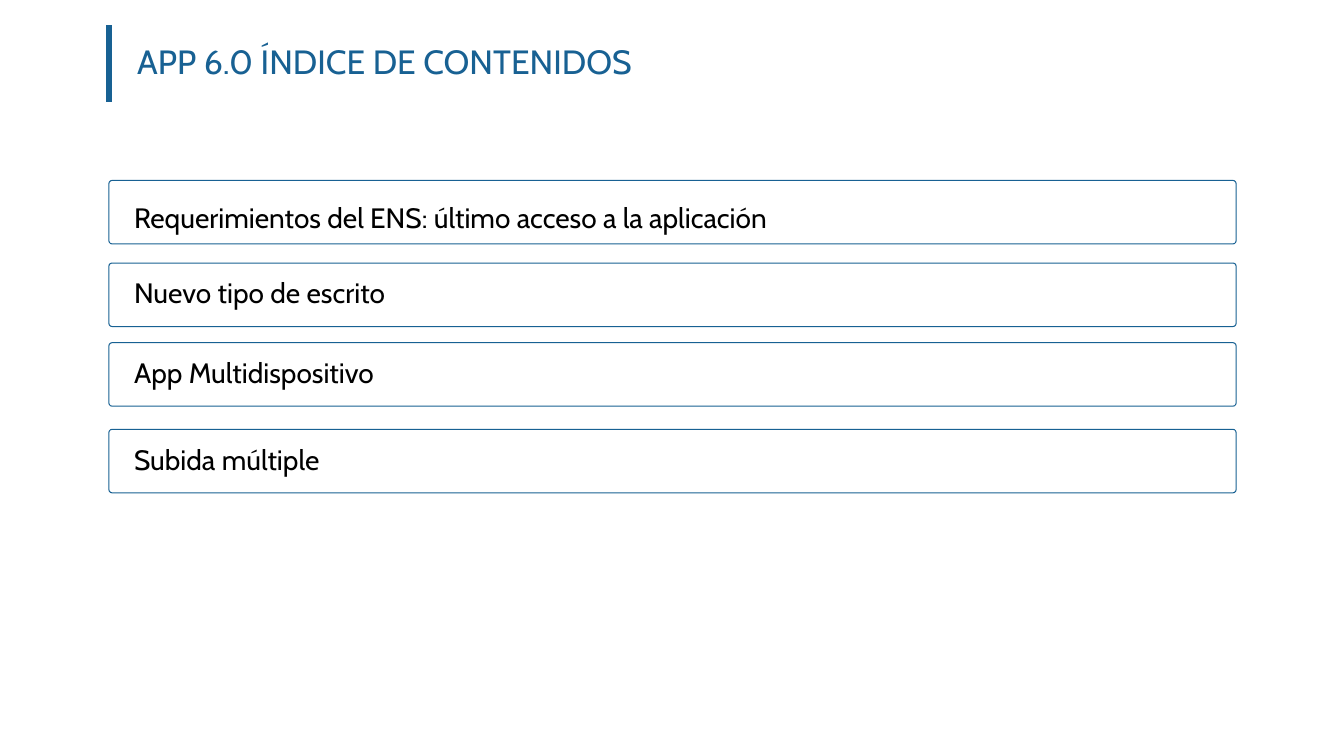
from lxml import etree
from pptx import Presentation
from pptx.dml.color import RGBColor
from pptx.enum.shapes import MSO_CONNECTOR as CONN, MSO_SHAPE as SHAPE
from pptx.enum.text import MSO_ANCHOR as ANCHOR, PP_ALIGN as ALIGN
from pptx.oxml.ns import qn
from pptx.util import Inches, Pt

BLUE = "186193"
BLACK = "000000"
FONT = "Cabin"
LEFT, WIDTH = 1.08, 11.18
ENTRY_HEIGHT = 0.63
ENTRIES = [
    (1.79, "Requerimientos del ENS: último acceso a la aplicación", 0.19),
    (2.61, "Nuevo tipo de escrito", 0.05),
    (3.4, "App Multidispositivo", 0.05),
    (4.26, "Subida múltiple", 0.05),
]


def rgb(value):
    return RGBColor.from_string(value)


def set_text(s, text, size, color, inset, top=0.05):
    tf = s.text_frame
    tf.text = text
    tf.word_wrap = True
    tf.vertical_anchor = ANCHOR.MIDDLE
    tf.margin_left, tf.margin_right = Inches(inset), Inches(0.1)
    tf.margin_top, tf.margin_bottom = Inches(top), Inches(0.05)
    p = tf.paragraphs[0]
    p.alignment = ALIGN.LEFT
    p.line_spacing = 0.9
    r = p.runs[0]
    r.font.name = FONT
    r.font.size = Pt(size)
    r.font.color.rgb = rgb(color)


def add_title_bar(slide):
    s = slide.shapes.add_connector(
        CONN.STRAIGHT, Inches(LEFT), Inches(0.25), Inches(LEFT), Inches(1.01))
    s.line.color.rgb = rgb(BLUE)
    s.line.width = Pt(4.5)
    etree.SubElement(s._element.spPr, qn("a:effectLst"))


def add_title(slide, text):
    s = slide.shapes.add_textbox(
        Inches(LEFT), Inches(0.26), Inches(WIDTH), Inches(0.74))
    set_text(s, text, 24, BLUE, 0.28)


def add_entry(slide, y, text, top):
    s = slide.shapes.add_shape(
        SHAPE.ROUNDED_RECTANGLE,
        Inches(LEFT), Inches(y), Inches(WIDTH), Inches(ENTRY_HEIGHT))
    s.adjustments[0] = 0.05
    s.shadow.inherit = False
    s.fill.background()
    s.line.color.rgb = rgb(BLUE)
    s.line.width = Pt(0.75)
    set_text(s, text, 20, BLACK, 0.24, top)


def main():
    prs = Presentation()
    prs.slide_width, prs.slide_height = Inches(13.33), Inches(7.5)
    slide = prs.slides.add_slide(prs.slide_layouts[6])
    add_title_bar(slide)
    add_title(slide, "APP 6.0 ÍNDICE DE CONTENIDOS")
    for y, text, top in ENTRIES:
        add_entry(slide, y, text, top)
    prs.save("out.pptx")


if __name__ == "__main__":
    main()
